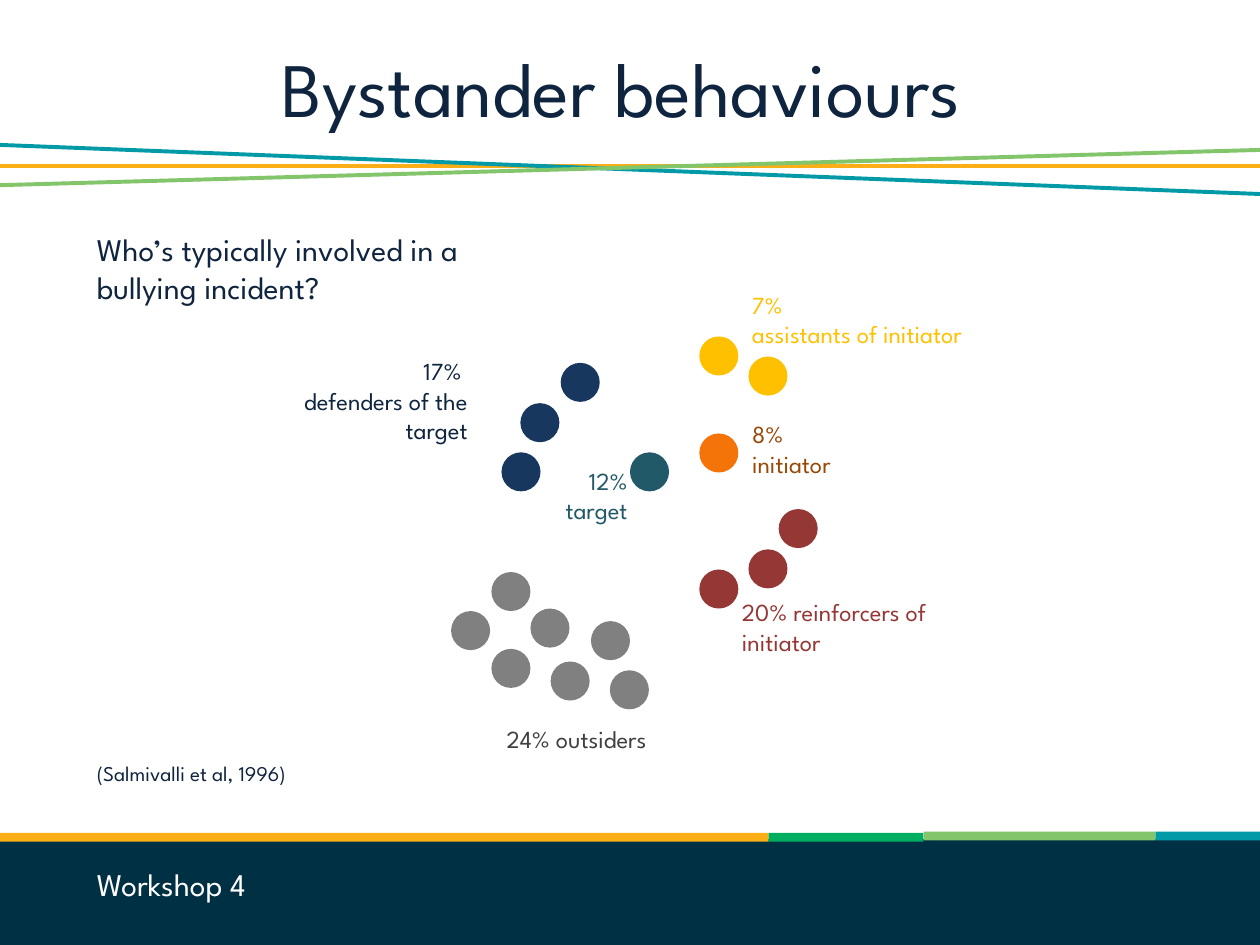
import pptx
import pptx.util
import pptx.dml.color
import pptx.enum.shapes
import pptx.enum.text
import pptx.oxml.ns
from lxml import etree

Inches = pptx.util.Inches
ALIGN = pptx.enum.text.PP_ALIGN
SHAPE = pptx.enum.shapes.MSO_SHAPE

THEME = {
    "font": "League Spartan",
    "title": 44, "body": 18, "label": 14, "source": 12,
    "line": 2.25,
    "ink": "0F243E", "white": "FFFFFF", "footer": "003044",
    "amber": "FBAE16", "teal": "019AA6", "lime": "82C56A", "green": "00AE61",
    "target": "215968", "initiator": "F4740A", "initiator text": "984807",
    "assistant": "FFC000", "reinforcer": "953735", "defender": "17375E",
    "outsider": "808080", "outsider text": "404040",
}
DOT = 0.31

TITLE = "Bystander behaviours "

# colour, left, top, width, height
FOOTER_BARS = [
    ("footer", 0, 6.66, 10, 0.84),
    ("amber", 0, 6.61, 6.1, 0.07),
    ("teal", 9.17, 6.6, 0.83, 0.07),
    ("green", 6.1, 6.61, 1.23, 0.07),
    ("lime", 7.33, 6.6, 1.84, 0.07),
]

# colour, height at the left edge, height at the right edge
HEADER_LINES = [("amber", 1.32, 1.32), ("teal", 1.15, 1.54), ("lime", 1.47, 1.19)]

# paragraphs, size, colour, (left, top, width, height)
TEXTS = [
    (["Who’s typically involved in a bullying incident?"], "body", "ink",
     (0.67, 1.78, 3.46, 0.7)),
    (["(Salmivalli et al, 1996)"], "source", "ink", (0.67, 5.99, 3.46, 0.3)),
    (["Workshop 4"], "body", "white", (0.67, 6.82, 1.81, 0.4)),
]

# label paragraphs, label colour, alignment, label box, dot colour, dot corners
GROUPS = [
    (["12% target"], "target", ALIGN.RIGHT, (4.21, 3.65, 0.87, 0.57),
     "target", [(5, 3.59)]),
    (["8% initiator"], "initiator text", ALIGN.LEFT, (5.87, 3.28, 1.02, 0.57),
     "initiator", [(5.55, 3.44)]),
    (["7%", "assistants of initiator"], "assistant", ALIGN.LEFT, (5.87, 2.25, 2.44, 0.57),
     "assistant", [(5.55, 2.67), (5.94, 2.83)]),
    (["20% reinforcers of initiator"], "reinforcer", ALIGN.LEFT, (5.79, 4.69, 1.81, 0.57),
     "reinforcer", [(5.94, 4.36), (5.55, 4.52), (6.18, 4.04)]),
    (["17% ", "defenders of the target"], "ink", ALIGN.RIGHT, (2.24, 2.78, 1.57, 0.81),
     "defender", [(4.45, 2.88), (4.13, 3.2), (3.98, 3.59)]),
    (["24% outsiders"], "outsider text", ALIGN.RIGHT, (3.66, 5.7, 1.57, 0.34),
     "outsider", [(4.69, 4.93), (3.9, 4.54), (4.21, 4.83), (4.84, 5.32),
                  (3.58, 4.85), (3.9, 5.15), (4.37, 5.25)]),
]


def rgb(name):
    return pptx.dml.color.RGBColor.from_string(THEME[name])


def add_filled(s, kind, color, box):
    sp = s.shapes.add_shape(kind, *map(Inches, box))
    sp.shadow.inherit = False
    sp.fill.solid()
    sp.fill.fore_color.rgb = rgb(color)
    sp.line.fill.background()


def add_line(s, color, y1, y2):
    line = s.shapes.add_connector(pptx.enum.shapes.MSO_CONNECTOR.STRAIGHT,
                                  Inches(0), Inches(y1), Inches(10), Inches(y2))
    line.line.color.rgb = rgb(color)
    line.line.width = pptx.util.Pt(THEME["line"])
    etree.SubElement(line._element.spPr, pptx.oxml.ns.qn("a:effectLst"))


def write(tf, paragraphs, size, color, align):
    tf.word_wrap = True
    for i, text in enumerate(paragraphs):
        p = tf.add_paragraph() if i else tf.paragraphs[0]
        p.text = text
        p.alignment = align
        p.font.name = THEME["font"]
        p.font.size = pptx.util.Pt(THEME[size])
        p.font.color.rgb = rgb(color)


def add_text(s, paragraphs, size, color, box, align=ALIGN.LEFT):
    sp = s.shapes.add_textbox(*map(Inches, box))
    write(sp.text_frame, paragraphs, size, color, align)


def add_title(s):
    title = s.shapes.title
    title.left, title.top, title.width, title.height = map(Inches, (0.51, 0.06, 9, 1.25))
    title.text_frame.vertical_anchor = pptx.enum.text.MSO_ANCHOR.MIDDLE
    write(title.text_frame, [TITLE], "title", "ink", ALIGN.CENTER)


def main():
    prs = pptx.Presentation()
    prs.slide_width, prs.slide_height = Inches(10), Inches(7.5)
    s = prs.slides.add_slide(prs.slide_layouts[5])
    for color, *box in FOOTER_BARS:
        add_filled(s, SHAPE.RECTANGLE, color, box)
    for color, y1, y2 in HEADER_LINES:
        add_line(s, color, y1, y2)
    add_title(s)
    for text in TEXTS:
        add_text(s, *text)
    for label, label_color, align, box, dot_color, dots in GROUPS:
        for x, y in dots:
            add_filled(s, SHAPE.OVAL, dot_color, (x, y, DOT, DOT))
        add_text(s, label, "label", label_color, box, align)
    prs.save("out.pptx")


if __name__ == "__main__":
    main()
